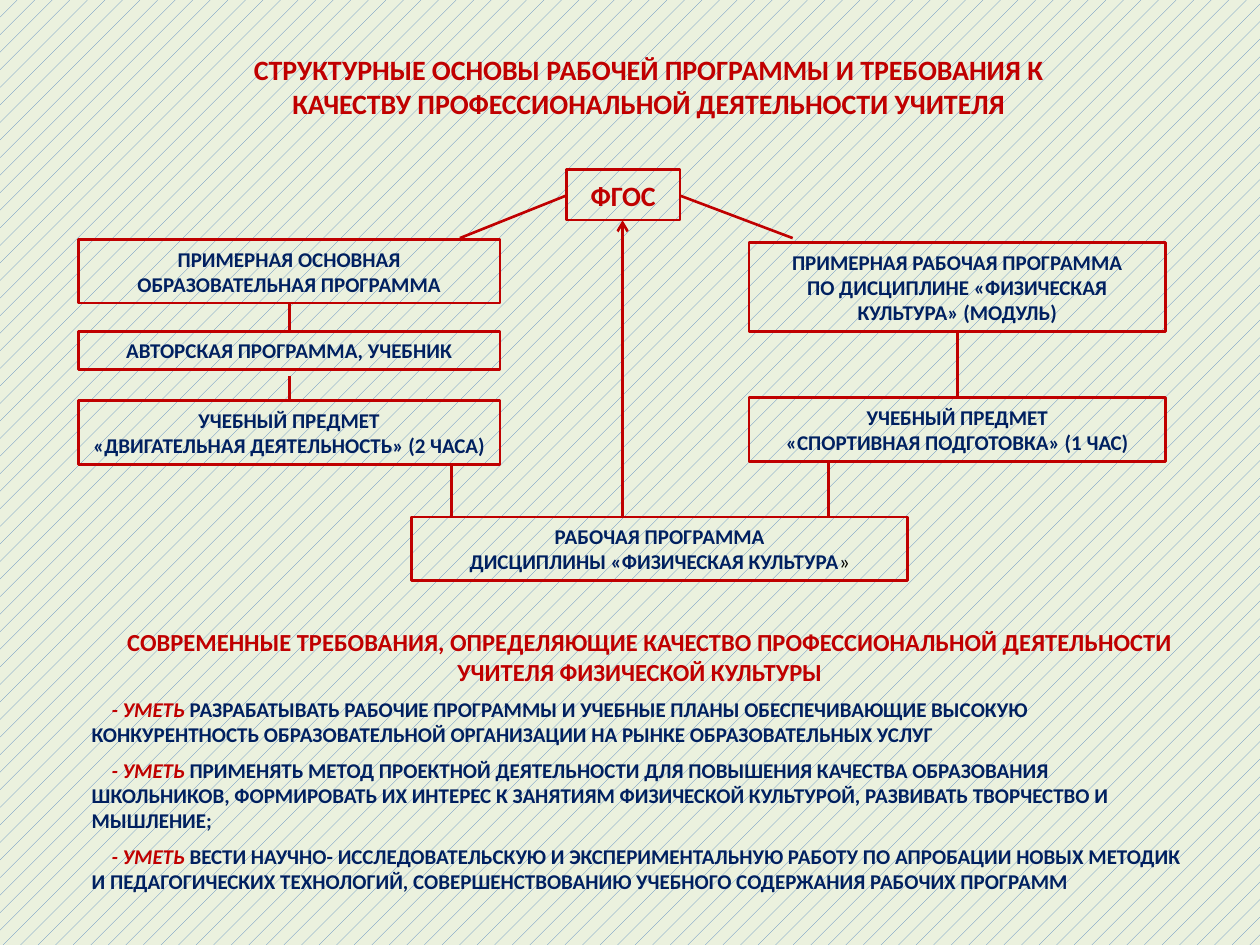
"""Build a slide on the structure of a work programme and the demands on a teacher."""
from lxml import etree
from pptx import Presentation
from pptx.dml.color import RGBColor
from pptx.enum.dml import MSO_PATTERN
from pptx.enum.shapes import MSO_CONNECTOR, MSO_SHAPE
from pptx.enum.text import MSO_ANCHOR, PP_ALIGN
from pptx.oxml.ns import qn
from pptx.util import Cm, Pt

RECT, STRAIGHT = MSO_SHAPE.RECTANGLE, MSO_CONNECTOR.STRAIGHT
CENTER, LEFT, MIDDLE = PP_ALIGN.CENTER, PP_ALIGN.LEFT, MSO_ANCHOR.MIDDLE

THEME = {
    "font": "Calibri",
    "red": RGBColor(0xC0, 0x00, 0x00),
    "navy": RGBColor(0x00, 0x20, 0x60),
    "black": RGBColor(0x00, 0x00, 0x00),
    "hatch": RGBColor(0x4F, 0x81, 0xBD),
    "paper": RGBColor(0xEB, 0xF1, 0xDE),
    "title": Pt(16),
    "heading": Pt(14),
    "body": Pt(12),
    "line": Pt(1.5),
}


def add_paragraph(tf, text, size, color, align=CENTER):
    p = tf.add_paragraph() if tf.paragraphs[0].runs else tf.paragraphs[0]
    p.alignment = align
    p.font.name, p.font.size, p.font.bold = THEME["font"], THEME[size], True
    p.font.color.rgb = THEME[color]
    p.add_run().text = text
    return p


prs = Presentation()
prs.slide_width, prs.slide_height = Cm(25.4), Cm(19.05)
s = prs.slides.add_slide(prs.slide_layouts[6])
fill = s.background.fill
fill.patterned()
fill.pattern = MSO_PATTERN.PERCENT_5
fill.fore_color.rgb, fill.back_color.rgb = THEME["hatch"], THEME["paper"]

tf = s.shapes.add_textbox(Cm(4.52), Cm(0.94), Cm(17.12), Cm(1.63)).text_frame
tf.word_wrap = False
for line in (
    "СТРУКТУРНЫЕ ОСНОВЫ РАБОЧЕЙ ПРОГРАММЫ И ТРЕБОВАНИЯ К",
    "КАЧЕСТВУ ПРОФЕССИОНАЛЬНОЙ ДЕЯТЕЛЬНОСТИ УЧИТЕЛЯ",
):
    add_paragraph(tf, line, "title", "red")

boxes = [
    (11.42, 3.42, 2.29, 1.02, "title", "red", ["ФГОС"]),
    (1.58, 4.83, 8.5, 1.28, "body", "navy",
     ["ПРИМЕРНАЯ ОСНОВНАЯ ОБРАЗОВАТЕЛЬНАЯ ПРОГРАММА"]),
    (1.58, 6.68, 8.5, 0.77, "body", "navy", ["АВТОРСКАЯ ПРОГРАММА, УЧЕБНИК"]),
    (1.58, 8.08, 8.5, 1.28, "body", "navy",
     ["УЧЕБНЫЙ ПРЕДМЕТ", "«ДВИГАТЕЛЬНАЯ ДЕЯТЕЛЬНОСТЬ» (2 ЧАСА)"]),
    (15.1, 4.89, 8.4, 1.79, "body", "navy",
     ["ПРИМЕРНАЯ РАБОЧАЯ ПРОГРАММА", "ПО ДИСЦИПЛИНЕ «ФИЗИЧЕСКАЯ КУЛЬТУРА» (МОДУЛЬ)"]),
    (15.1, 8.02, 8.4, 1.28, "body", "navy",
     ["УЧЕБНЫЙ ПРЕДМЕТ", "«СПОРТИВНАЯ ПОДГОТОВКА» (1 ЧАС)"]),
    (8.3, 10.42, 10, 1.28, "body", "navy",
     ["РАБОЧАЯ ПРОГРАММА", "ДИСЦИПЛИНЫ «ФИЗИЧЕСКАЯ КУЛЬТУРА"]),
]
for x, y, w, h, size, color, lines in boxes:
    sp = s.shapes.add_shape(RECT, Cm(x), Cm(y), Cm(w), Cm(h))
    sp.shadow.inherit = False
    sp.fill.background()
    sp.line.color.rgb, sp.line.width = THEME["red"], THEME["line"]
    tf = sp.text_frame
    tf.word_wrap, tf.vertical_anchor = True, MIDDLE
    for line in lines:
        p = add_paragraph(tf, line, size, color)
r = p.add_run()
r.text = "»"
r.font.bold, r.font.color.rgb = False, THEME["black"]

links = [
    (11.42, 3.94, 9.27, 4.8),
    (13.7, 3.94, 15.98, 4.8),
    (5.83, 6.11, 5.83, 6.68),
    (5.83, 7.57, 5.83, 8.08),
    (9.1, 9.36, 9.1, 10.42),
    (19.3, 6.68, 19.3, 8.02),
    (16.7, 9.3, 16.7, 10.42),
    (12.55, 10.42, 12.55, 4.44),
]
for x1, y1, x2, y2 in links:
    link = s.shapes.add_connector(STRAIGHT, Cm(x1), Cm(y1), Cm(x2), Cm(y2))
    link.line.color.rgb, link.line.width = THEME["red"], THEME["line"]
    etree.SubElement(link._element.spPr, qn("a:effectLst"))
etree.SubElement(link.line._get_or_add_ln(), qn("a:tailEnd"), type="arrow")

tf = s.shapes.add_textbox(Cm(1.6), Cm(12.52), Cm(22.6), Cm(5.7)).text_frame
tf.word_wrap = True
add_paragraph(
    tf,
    "СОВРЕМЕННЫЕ ТРЕБОВАНИЯ, ОПРЕДЕЛЯЮЩИЕ КАЧЕСТВО ПРОФЕССИОНАЛЬНОЙ "
    "ДЕЯТЕЛЬНОСТИ УЧИТЕЛЯ ФИЗИЧЕСКОЙ КУЛЬТУРЫ",
    "heading", "red",
)
for skill in (
    "РАЗРАБАТЫВАТЬ РАБОЧИЕ ПРОГРАММЫ И УЧЕБНЫЕ ПЛАНЫ ОБЕСПЕЧИВАЮЩИЕ ВЫСОКУЮ "
    "КОНКУРЕНТНОСТЬ ОБРАЗОВАТЕЛЬНОЙ ОРГАНИЗАЦИИ НА РЫНКЕ ОБРАЗОВАТЕЛЬНЫХ УСЛУГ",
    "ПРИМЕНЯТЬ МЕТОД ПРОЕКТНОЙ ДЕЯТЕЛЬНОСТИ ДЛЯ ПОВЫШЕНИЯ КАЧЕСТВА ОБРАЗОВАНИЯ "
    "ШКОЛЬНИКОВ, ФОРМИРОВАТЬ ИХ ИНТЕРЕС К ЗАНЯТИЯМ ФИЗИЧЕСКОЙ КУЛЬТУРОЙ, "
    "РАЗВИВАТЬ ТВОРЧЕСТВО И МЫШЛЕНИЕ;",
    "ВЕСТИ НАУЧНО- ИССЛЕДОВАТЕЛЬСКУЮ И ЭКСПЕРИМЕНТАЛЬНУЮ РАБОТУ ПО АПРОБАЦИИ "
    "НОВЫХ МЕТОДИК И ПЕДАГОГИЧЕСКИХ ТЕХНОЛОГИЙ, СОВЕРШЕНСТВОВАНИЮ УЧЕБНОГО "
    "СОДЕРЖАНИЯ РАБОЧИХ ПРОГРАММ",
):
    p = add_paragraph(tf, "- УМЕТЬ ", "body", "navy", LEFT)
    p.runs[0].font.italic, p.runs[0].font.color.rgb = True, THEME["red"]
    p.add_run().text = skill
for p in tf.paragraphs:
    p.space_after = Pt(6)
    p._p.get_or_add_pPr().set("indent", str(Cm(0.4)))

prs.save("out.pptx")
